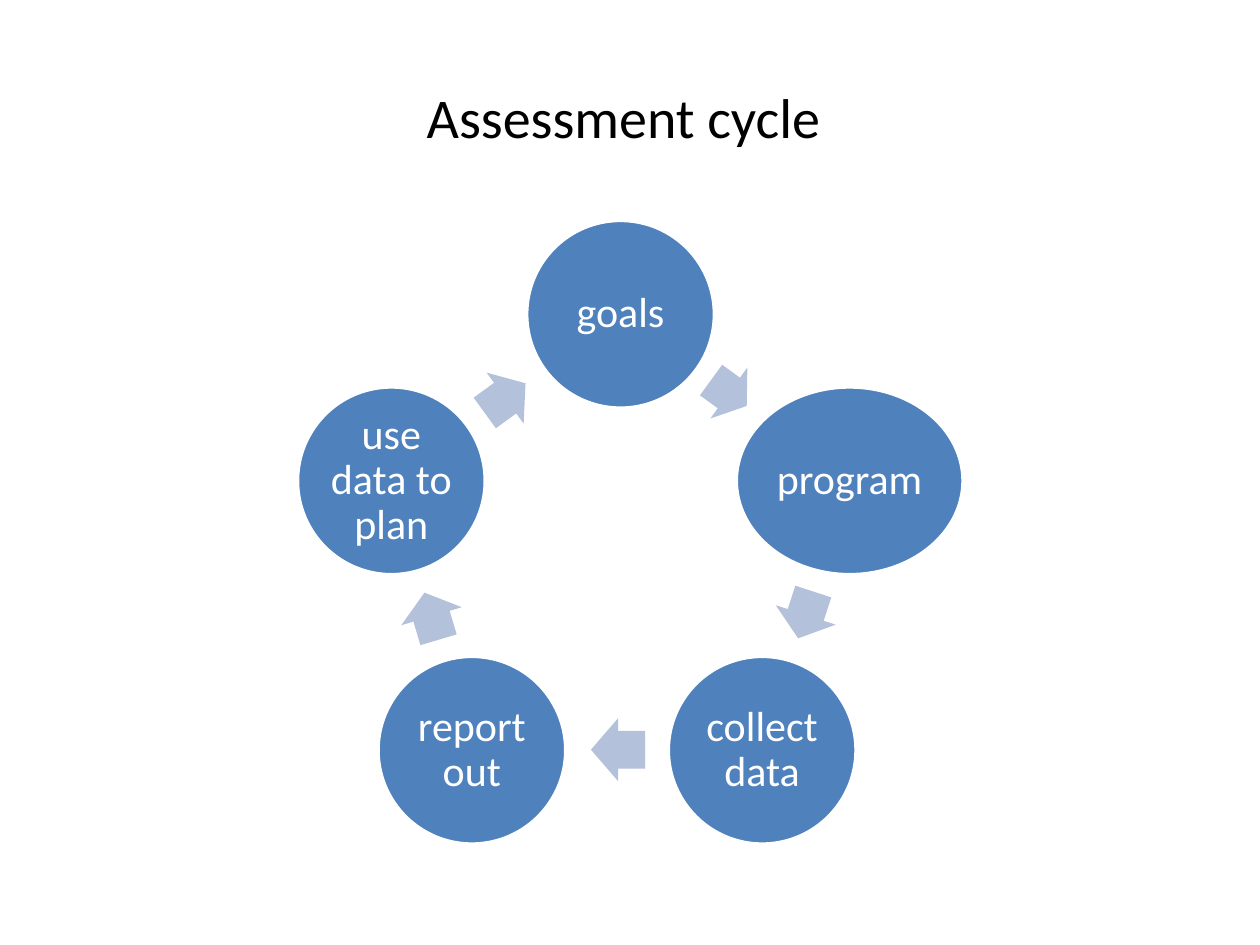
from math import cos, radians, sin

from pptx import Presentation
from pptx.dml.color import RGBColor
from pptx.enum.shapes import MSO_SHAPE as Shape
from pptx.enum.text import MSO_ANCHOR as Anchor, PP_ALIGN as Align
from pptx.util import Pt

BLACK = RGBColor(0x00, 0x00, 0x00)
WHITE = RGBColor(0xFF, 0xFF, 0xFF)
BLUE = RGBColor(0x4F, 0x81, 0xBD)
PALE_BLUE = RGBColor(0xB3, 0xC1, 0xDB)

FONT = "Calibri"
CENTER_X, CENTER_Y, RADIUS = 354.6, 317.3, 137.7
STEP_HEIGHT, ARROW_HEIGHT = 107.3, 36

# label, width, horizontal shift
STEPS = [
    ("goals", 107.3, 0),
    ("program", 129.6, 0),
    ("collect data", 107.3, 0),
    ("report out", 107.3, -4),
    ("use data to plan", 107.3, 0),
]
# center x, center y, length, rotation
ARROWS = [
    (416.5, 224.6, 25.2, 36),
    (460.4, 351.4, 28.1, 108),
    (353.2, 428.4, 31, 180),
    (246.6, 352.1, 28.1, 253.4),
    (288.7, 227.5, 28.8, 324),
]


def format_text(text_frame, size, color):
    text_frame.word_wrap = True
    text_frame.vertical_anchor = Anchor.MIDDLE
    for paragraph in text_frame.paragraphs:
        paragraph.alignment = Align.CENTER
        for run in paragraph.runs:
            run.font.name = FONT
            run.font.size = Pt(size)
            run.font.color.rgb = color


def add_title(slide, text):
    title = slide.shapes.title
    title.left, title.top, title.width, title.height = Pt(36), Pt(21.6), Pt(648), Pt(90)
    title.text_frame.text = text
    format_text(title.text_frame, 32, BLACK)


def add_centered_shape(slide, kind, x, y, width, height, color):
    shape = slide.shapes.add_shape(
        kind, Pt(x - width / 2), Pt(y - height / 2), Pt(width), Pt(height)
    )
    shape.shadow.inherit = False
    shape.fill.solid()
    shape.fill.fore_color.rgb = color
    return shape


def add_step(slide, label, x, y, width):
    shape = add_centered_shape(slide, Shape.OVAL, x, y, width, STEP_HEIGHT, BLUE)
    shape.line.color.rgb = WHITE
    shape.line.width = Pt(2)
    text_frame = shape.text_frame
    text_frame.margin_left = text_frame.margin_right = Pt(2.4)
    text_frame.margin_top = text_frame.margin_bottom = Pt(2.4)
    text_frame.text = label
    text_frame.paragraphs[0].line_spacing = 0.9
    format_text(text_frame, 24, WHITE)


def add_arrow(slide, x, y, length, rotation):
    shape = add_centered_shape(
        slide, Shape.RIGHT_ARROW, x, y, length, ARROW_HEIGHT, PALE_BLUE
    )
    shape.line.fill.background()
    shape.adjustments[0] = 0.6
    shape.adjustments[1] = 0.5
    shape.rotation = rotation


def main():
    presentation = Presentation()
    presentation.slide_width, presentation.slide_height = Pt(720), Pt(540)
    slide = presentation.slides.add_slide(presentation.slide_layouts[5])
    add_title(slide, "Assessment cycle ")
    for index, (label, width, shift) in enumerate(STEPS):
        angle = radians(index * 360 / len(STEPS))
        x = CENTER_X + RADIUS * sin(angle) + shift
        y = CENTER_Y - RADIUS * cos(angle)
        add_step(slide, label, x, y, width)
    for arrow in ARROWS:
        add_arrow(slide, *arrow)
    presentation.save("out.pptx")


if __name__ == "__main__":
    main()
